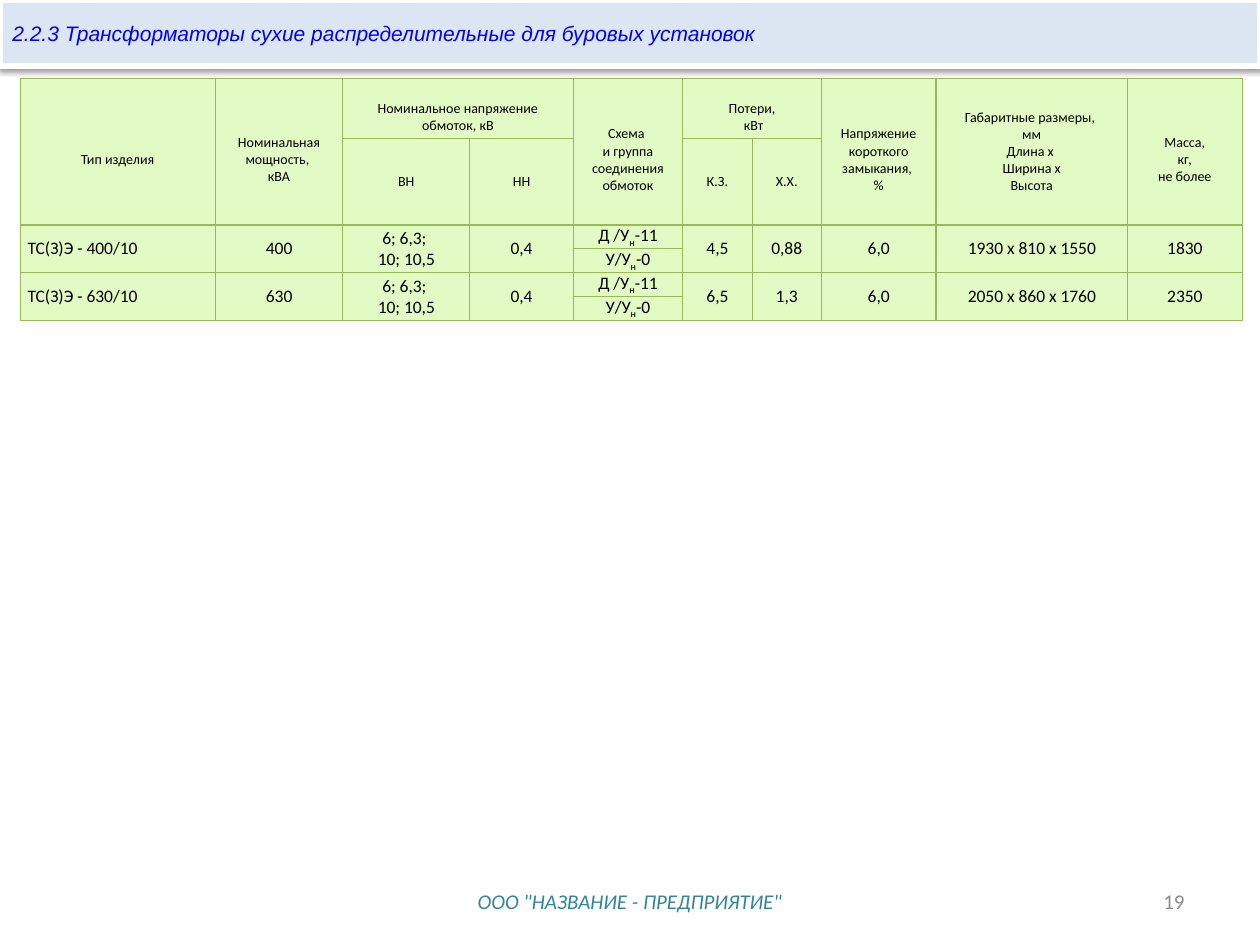
from dataclasses import dataclass

from lxml.etree import SubElement
from pptx import Presentation
from pptx.dml.color import RGBColor
from pptx.enum.shapes import MSO_SHAPE
from pptx.enum.text import MSO_ANCHOR, PP_ALIGN
from pptx.oxml import parse_xml
from pptx.oxml.ns import nsdecls, qn
from pptx.util import Inches, Pt

SLIDE_WIDTH, SLIDE_HEIGHT = 10, 7.5
COLORS = {
    "banner": "DCE6F2", "title": "0000FF", "white": "FFFFFF",
    "cell": "E2FAC3", "border": "98B955", "text": "000000",
    "company": "31859C", "number": "8C8C8C", "shadow": "000000",
}
COLUMN_WIDTHS = [1.55, 1.01, 1.01, 0.82, 0.87, 0.55, 0.55, 0.91, 1.52, 0.91]
ROW_HEIGHTS = [0.48, 0.67] + [0.19] * 4
HEADER_ROWS, ROWS_PER_PRODUCT, GROUP_COLUMN = 2, 2, 4
HEADER_TOP_MARGIN = 0.13


@dataclass(frozen=True)
class Area:
    left: float
    top: float
    width: float
    height: float

    def lengths(self) -> tuple:
        return (Inches(self.left * SLIDE_WIDTH), Inches(self.top * SLIDE_HEIGHT),
                Inches(self.width * SLIDE_WIDTH), Inches(self.height * SLIDE_HEIGHT))


@dataclass(frozen=True)
class Style:
    size: float
    color: str
    font: str = "Calibri"
    italic: bool = False
    align: PP_ALIGN = PP_ALIGN.CENTER


@dataclass(frozen=True)
class Entry:
    row: int
    column: int
    text: str
    rows: int = 1
    columns: int = 1
    top_margin: float = 0
    style: Style = Style(8, "text")


@dataclass(frozen=True)
class Product:
    name: str
    power: str
    short_circuit_loss: str
    idle_loss: str
    dimensions: str
    mass: str

    def values(self) -> list:
        return [self.name, self.power, "6; 6,3; \n10; 10,5", "0,4", None,
                self.short_circuit_loss, self.idle_loss, "6,0",
                self.dimensions, self.mass]


HEADER = [
    Entry(0, 0, "Тип изделия", 2, 1, HEADER_TOP_MARGIN),
    Entry(0, 1, "Номинальная мощность, \nкВА", 2, 1, HEADER_TOP_MARGIN),
    Entry(0, 2, "Номинальное напряжение обмоток, кВ", 1, 2, HEADER_TOP_MARGIN),
    Entry(0, 4, "Схема \nи группа соединения обмоток", 2, 1, HEADER_TOP_MARGIN),
    Entry(0, 5, "Потери,\n кВт", 1, 2, HEADER_TOP_MARGIN),
    Entry(0, 7, "Напряжение короткого замыкания, \n%", 2, 1, HEADER_TOP_MARGIN),
    Entry(0, 8, "Габаритные размеры, \nмм\nДлина х \nШирина х\nВысота", 2),
    Entry(0, 9, "Масса,\n кг, \nне более", 2, 1, HEADER_TOP_MARGIN),
    Entry(1, 2, "ВН"),
    Entry(1, 3, "НН"),
    Entry(1, 5, "К.З."),
    Entry(1, 6, "Х.Х."),
]
PRODUCTS = [
    Product("ТС(З)Э - 400/10", "400", "4,5", "0,88", "1930 х 810 х 1550", "1830"),
    Product("ТС(З)Э - 630/10", "630", "6,5", "1,3", "2050 х 860 х 1760", "2350"),
]
GROUPS = ["Д /У_н_-11", "У/У_н_-0"]
VALUE_STYLE = Style(10, "text")
NAME_STYLE = Style(10, "text", align=PP_ALIGN.LEFT)


def rgb(name: str) -> RGBColor:
    return RGBColor.from_string(COLORS[name])


def write_text(frame, text: str, style: Style) -> None:
    frame.word_wrap = True
    for index, line in enumerate(text.split("\n")):
        para = frame.paragraphs[0] if index == 0 else frame.add_paragraph()
        para.alignment = style.align
        for part, piece in enumerate(line.split("_")):
            span = para.add_run()
            span.text = piece
            formats = {"name": style.font, "size": Pt(style.size), "italic": style.italic}
            for attribute, value in formats.items():
                setattr(span.font, attribute, value)
            span.font.color.rgb = rgb(style.color)
            if part % 2:
                span._r.get_or_add_rPr().set("baseline", "-25000")


def add_banner(page, area: Area, text: str, style: Style) -> None:
    box = page.shapes.add_shape(MSO_SHAPE.RECTANGLE, *area.lengths())
    box.fill.solid()
    box.fill.fore_color.rgb = rgb("banner")
    box.line.color.rgb = rgb("white")
    box.line.width = Pt(3)
    box.shadow.inherit = False
    effects = box._element.spPr.find(qn("a:effectLst"))
    shadow = SubElement(effects, qn("a:outerShdw"), blurRad=str(Pt(3.1)),
                        dist=str(Pt(1.6)), dir="5400000", rotWithShape="0")
    color = SubElement(shadow, qn("a:srgbClr"), val=COLORS["shadow"])
    SubElement(color, qn("a:alpha"), val="38000")
    box.text_frame.vertical_anchor = MSO_ANCHOR.MIDDLE
    write_text(box.text_frame, text, style)


def add_label(page, area: Area, text: str, style: Style) -> None:
    box = page.shapes.add_textbox(*area.lengths())
    box.text_frame.vertical_anchor = MSO_ANCHOR.MIDDLE
    write_text(box.text_frame, text, style)


def format_cell(cell) -> None:
    formats = {"margin_left": Inches(0.06), "margin_right": Inches(0.06),
               "margin_top": 0, "margin_bottom": 0,
               "vertical_anchor": MSO_ANCHOR.MIDDLE}
    for attribute, value in formats.items():
        setattr(cell, attribute, value)
    cell.fill.solid()
    cell.fill.fore_color.rgb = rgb("cell")
    properties = cell._tc.get_or_add_tcPr()
    for index, side in enumerate(("lnL", "lnR", "lnT", "lnB")):
        properties.insert(index, parse_xml(
            f'<a:{side} {nsdecls("a")} w="{Pt(0.75)}"><a:solidFill>'
            f'<a:srgbClr val="{COLORS["border"]}"/></a:solidFill></a:{side}>'))


def product_entries(index: int, product: Product) -> list[Entry]:
    row = HEADER_ROWS + index * ROWS_PER_PRODUCT
    entries = [
        Entry(row, column, text, ROWS_PER_PRODUCT,
              style=VALUE_STYLE if column else NAME_STYLE)
        for column, text in enumerate(product.values()) if text is not None
    ]
    return entries + [Entry(row + offset, GROUP_COLUMN, text, style=VALUE_STYLE)
                      for offset, text in enumerate(GROUPS)]


def add_product_table(page, area: Area, entries: list[Entry]) -> None:
    table = page.shapes.add_table(
        len(ROW_HEIGHTS), len(COLUMN_WIDTHS), *area.lengths()).table
    table.first_row = table.horz_banding = False
    for column, width in zip(table.columns, COLUMN_WIDTHS):
        column.width = Inches(width)
    for row, height in zip(table.rows, ROW_HEIGHTS):
        row.height = Inches(height)
    for cell in table.iter_cells():
        format_cell(cell)
        cell.text_frame.paragraphs[0].font.size = Pt(8)
    for entry in entries:
        cell = table.cell(entry.row, entry.column)
        if entry.rows * entry.columns > 1:
            cell.merge(table.cell(entry.row + entry.rows - 1,
                                  entry.column + entry.columns - 1))
        cell.margin_top = Inches(entry.top_margin)
        write_text(cell.text_frame, entry.text, entry.style)


def main() -> None:
    deck = Presentation()
    deck.slide_width, deck.slide_height = Inches(SLIDE_WIDTH), Inches(SLIDE_HEIGHT)
    page = deck.slides.add_slide(deck.slide_layouts[6])
    add_banner(page, Area(0, 0, 1, 0.07),
               "2.2.3 Трансформаторы сухие распределительные для буровых установок",
               Style(12, "title", "Arial", True, PP_ALIGN.LEFT))
    entries = HEADER + [entry for index, product in enumerate(PRODUCTS)
                        for entry in product_entries(index, product)]
    add_product_table(page, Area(0.016, 0.083, sum(COLUMN_WIDTHS) / SLIDE_WIDTH,
                                 sum(ROW_HEIGHTS) / SLIDE_HEIGHT), entries)
    add_label(page, Area(0.34, 0.927, 0.32, 0.053),
              'ООО "НАЗВАНИЕ - ПРЕДПРИЯТИЕ"', Style(12, "company", italic=True))
    add_label(page, Area(0.717, 0.927, 0.233, 0.053), "19",
              Style(12, "number", align=PP_ALIGN.RIGHT))
    deck.save("out.pptx")


if __name__ == "__main__":
    main()
